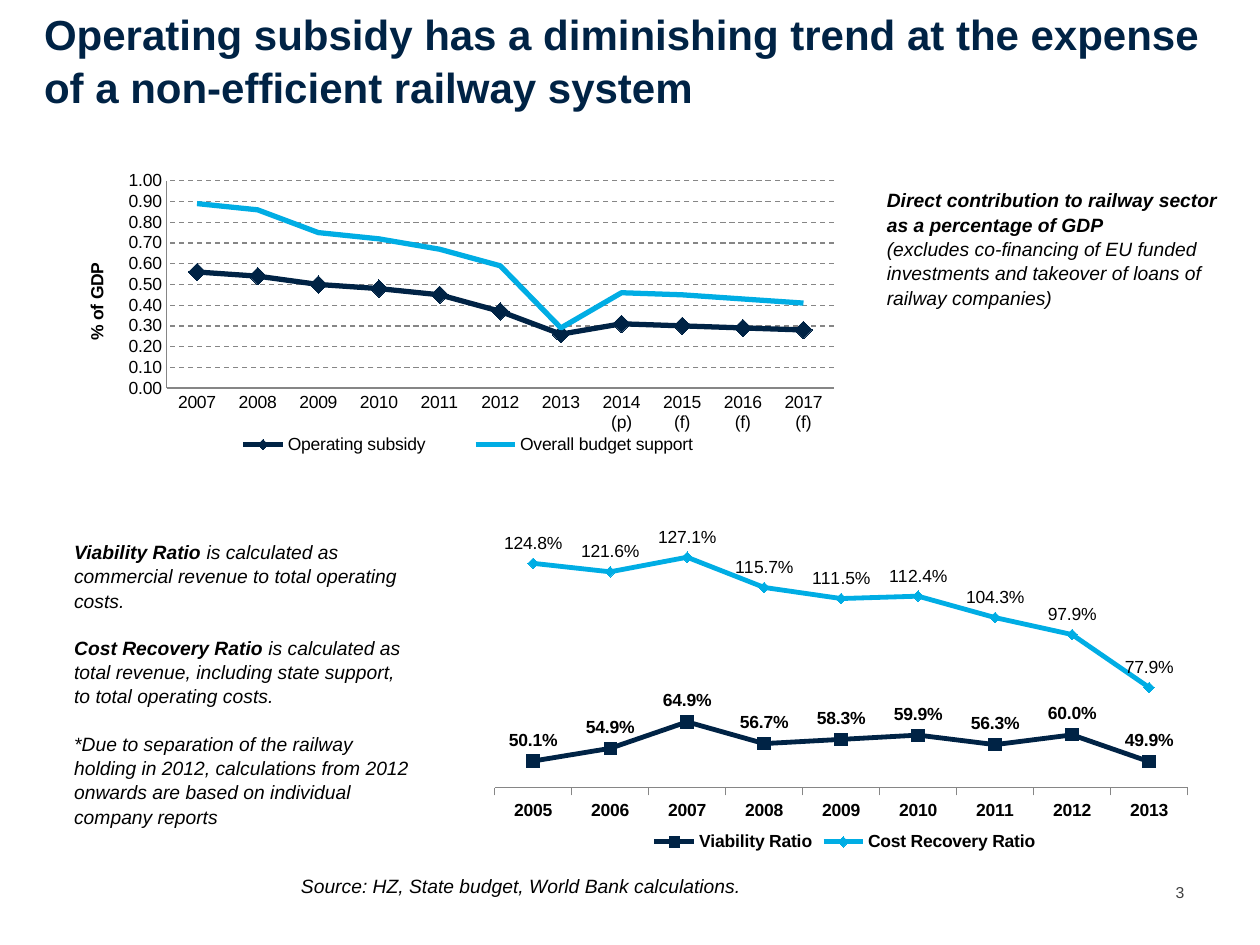
from lxml import etree
from pptx import Presentation
from pptx.chart.data import CategoryChartData
from pptx.dml.color import RGBColor
from pptx.enum.chart import (XL_CHART_TYPE, XL_LABEL_POSITION, XL_LEGEND_POSITION,
                             XL_MARKER_STYLE, XL_TICK_MARK)
from pptx.enum.dml import MSO_LINE
from pptx.enum.text import MSO_ANCHOR, PP_ALIGN
from pptx.oxml.ns import qn
from pptx.util import Inches, Pt

LINE_CHART = XL_CHART_TYPE.LINE_MARKERS
ABOVE = XL_LABEL_POSITION.ABOVE
RIGHT, BOTTOM = XL_LEGEND_POSITION.RIGHT, XL_LEGEND_POSITION.BOTTOM
DIAMOND, SQUARE, NO_MARKER = XL_MARKER_STYLE.DIAMOND, XL_MARKER_STYLE.SQUARE, XL_MARKER_STYLE.NONE
NO_TICK, TICK_OUTSIDE = XL_TICK_MARK.NONE, XL_TICK_MARK.OUTSIDE
DASH = MSO_LINE.DASH
ANCHOR_TOP, ANCHOR_BOTTOM = MSO_ANCHOR.TOP, MSO_ANCHOR.BOTTOM
ALIGN_LEFT = PP_ALIGN.LEFT

WIDTH, HEIGHT = Inches(10), Inches(7.5)
COLUMNS, ROWS = 100, 75
NAVY, SKY, BLACK, GREY, AXIS_GREY = "002345", "00ADE4", "000000", "404040", "868686"


def color(hex_string):
    return RGBColor.from_string(hex_string)


def add_text(paragraph, text, font="Arial", size=11, hex_color=BLACK, bold=False, italic=False):
    run = paragraph.add_run()
    run.text = text
    run.font.name, run.font.size = font, Pt(size)
    run.font.bold, run.font.italic = bold, italic
    run.font.color.rgb = color(hex_color)


def set_chart_layout(parent, position, after=None, inner=False):
    """Place a plot area or legend by shares (x, y, width, height) of its chart."""
    for old in parent.findall(qn("c:layout")):
        parent.remove(old)
    layout = etree.Element(qn("c:layout"))
    manual = etree.SubElement(layout, qn("c:manualLayout"))
    settings = [("layoutTarget", "inner")] if inner else []
    settings += [("xMode", "edge"), ("yMode", "edge"), *zip("xywh", position)]
    for tag, value in settings:
        etree.SubElement(manual, qn(f"c:{tag}")).set("val", str(value))
    if after is None:
        parent.insert(0, layout)
    else:
        after.addnext(layout)


class SlideBuilder:
    """Holds the slide and its style; boxes are (column, row, columns, rows)."""

    def __init__(self, presentation):
        self.slide = presentation.slides.add_slide(presentation.slide_layouts[5])
        self.line_spacing = 1.05

    def place(self, box):
        column, row, columns, rows = box
        return (int(WIDTH * column / COLUMNS), int(HEIGHT * row / ROWS),
                int(WIDTH * columns / COLUMNS), int(HEIGHT * rows / ROWS))

    def fill_frame(self, frame, paragraphs, insets, anchor=ANCHOR_TOP, gap=0):
        """Each paragraph is a list of (text, format) pairs."""
        frame.word_wrap = True
        frame.vertical_anchor = anchor
        (frame.margin_left, frame.margin_top,
         frame.margin_right, frame.margin_bottom) = map(Inches, insets)
        for index, runs in enumerate(paragraphs):
            paragraph = frame.add_paragraph() if index else frame.paragraphs[0]
            paragraph.alignment = ALIGN_LEFT
            paragraph.line_spacing = self.line_spacing
            paragraph.space_before = Pt(gap if index else 0)
            for text, text_format in runs:
                add_text(paragraph, text, **text_format)

    def title(self, box, text):
        shape = self.slide.shapes.title
        shape.left, shape.top, shape.width, shape.height = self.place(box)
        self.fill_frame(shape.text_frame, [[(text, dict(size=24, hex_color=NAVY, bold=True))]],
                        (0, 0, 0, 0.02), ANCHOR_BOTTOM)

    def text_box(self, box, paragraphs, insets=(0.1, 0.05, 0.1, 0.05), gap=0):
        shape = self.slide.shapes.add_textbox(*self.place(box))
        self.fill_frame(shape.text_frame, paragraphs, insets, gap=gap)

    def line_chart(self, box, categories, series, plot_position, legend_position, line_width,
                   value_range, number_format, bold=False):
        """Each series is (name, values, colour, marker style, marker size)."""
        data = CategoryChartData(number_format=number_format)
        data.categories = categories
        for name, values, *_ in series:
            data.add_series(name, values)
        chart = self.slide.shapes.add_chart(LINE_CHART, *self.place(box), data).chart
        chart.has_title = False
        chart.font.name, chart.font.size = "Arial", Pt(10)
        chart.font.color.rgb = color(BLACK)
        chart.plots[0].vary_by_categories = False
        for line, (_, _, hex_color, style, size) in zip(chart.plots[0].series, series):
            line.smooth = False
            line.format.line.width = Pt(line_width)
            line.format.line.color.rgb = color(hex_color)
            line.marker.style = style
            if style != NO_MARKER:
                line.marker.size = size
                line.marker.format.fill.solid()
                line.marker.format.fill.fore_color.rgb = color(hex_color)
                line.marker.format.line.color.rgb = color(hex_color)
        chart.has_legend = True
        chart.legend.position = legend_position
        chart.legend.include_in_layout = False
        chart.legend.font.size, chart.legend.font.bold = Pt(10), bold
        chart.category_axis.tick_labels.font.bold = bold
        for axis in (chart.category_axis, chart.value_axis):
            axis.format.line.color.rgb = color(AXIS_GREY)
            axis.major_tick_mark = NO_TICK
        chart.value_axis.minimum_scale, chart.value_axis.maximum_scale = value_range
        chart.value_axis.has_major_gridlines = False
        set_chart_layout(chart._chartSpace.chart.plotArea, plot_position, inner=True)
        return chart


def add_subsidy_chart(builder):
    years = [str(year) for year in range(2007, 2014)] + ["2014 (p)", "2015 (f)", "2016 (f)", "2017 (f)"]
    series = [
        ("Operating subsidy", (0.56, 0.54, 0.5, 0.48, 0.45, 0.37, 0.26, 0.31, 0.3, 0.29, 0.28),
         NAVY, DIAMOND, 10),
        ("Overall budget support", (0.89, 0.86, 0.75, 0.72, 0.67, 0.59, 0.29, 0.46, 0.45, 0.43, 0.41),
         SKY, NO_MARKER, None)]
    chart = builder.line_chart((4.3, 12.9, 63.8, 24.2), years, series, (0.14, 0.06, 0.83, 0.68),
                               RIGHT, 3, (0, 1), "#,##0.00")
    axis = chart.value_axis
    axis.major_unit = 0.1
    axis.tick_labels.number_format = "#,##0.00"
    axis.tick_labels.number_format_is_linked = False
    axis.has_major_gridlines = True
    gridline = axis.major_gridlines.format.line
    gridline.color.rgb = color(AXIS_GREY)
    gridline.width, gridline.dash_style = Pt(0.75), DASH
    add_text(axis.axis_title.text_frame.paragraphs[0], "% of GDP", size=10, bold=True)
    legend = chart.legend._element
    set_chart_layout(legend, (0.18, 0.88, 0.67, 0.09), after=legend.find(qn("c:legendPos")))


def add_ratio_chart(builder):
    years = [str(year) for year in range(2005, 2014)]
    series = [
        ("Viability Ratio", (0.501, 0.549, 0.649, 0.567, 0.583, 0.599, 0.563, 0.6, 0.499),
         NAVY, SQUARE, 7),
        ("Cost Recovery Ratio", (1.248, 1.216, 1.271, 1.157, 1.115, 1.124, 1.043, 0.979, 0.779),
         SKY, DIAMOND, 6)]
    chart = builder.line_chart((38.1, 40.7, 57.9, 27.3), years, series, (0.02, 0.03, 0.95, 0.77),
                               BOTTOM, 2.75, (0.4, 1.4), "0.0%", bold=True)
    chart.value_axis.visible = False
    chart.category_axis.major_tick_mark = TICK_OUTSIDE
    for line, bold in zip(chart.plots[0].series, (True, False)):
        labels = line.data_labels
        labels.show_value, labels.position = True, ABOVE
        labels.number_format, labels.number_format_is_linked = "0.0%", False
        labels.font.size, labels.font.bold = Pt(10), bold


def main():
    presentation = Presentation()
    presentation.slide_width, presentation.slide_height = WIDTH, HEIGHT
    builder = SlideBuilder(presentation)
    italic = dict(italic=True)
    strong = dict(italic=True, bold=True)

    builder.title((3.5, 2.8, 92.9, 6.3), "Operating subsidy has a diminishing trend at the expense "
                  "of a non-efficient railway system")
    add_subsidy_chart(builder)
    add_ratio_chart(builder)
    builder.text_box((69.4, 14.4, 28.6, 10.3), [
        [("Direct contribution to railway sector as a percentage of GDP", strong)],
        [("(excludes co-financing of EU funded investments and takeover of loans of "
          "railway companies)", italic)]])
    builder.text_box((4.9, 42.3, 28.6, 23.2), [
        [("Viability Ratio ", strong),
         ("is calculated as commercial revenue to total operating costs.", italic)],
        [("Cost Recovery Ratio ", strong),
         ("is calculated as total revenue, including state support, to total operating costs.", italic)],
        [("*Due to separation of the railway holding in 2012, calculations from 2012 onwards "
          "are based on individual company reports", italic)]], gap=13.2)
    builder.text_box((22.9, 68.8, 43.5, 2.9),
                     [[("Source: HZ, State budget, World Bank calculations.", italic)]])
    builder.text_box((93.3, 69.6, 3.1, 2.4), [[("3", dict(size=9, hex_color=GREY))]],
                     insets=(0, 0.04, 0, 0))
    presentation.save("out.pptx")


if __name__ == "__main__":
    main()
